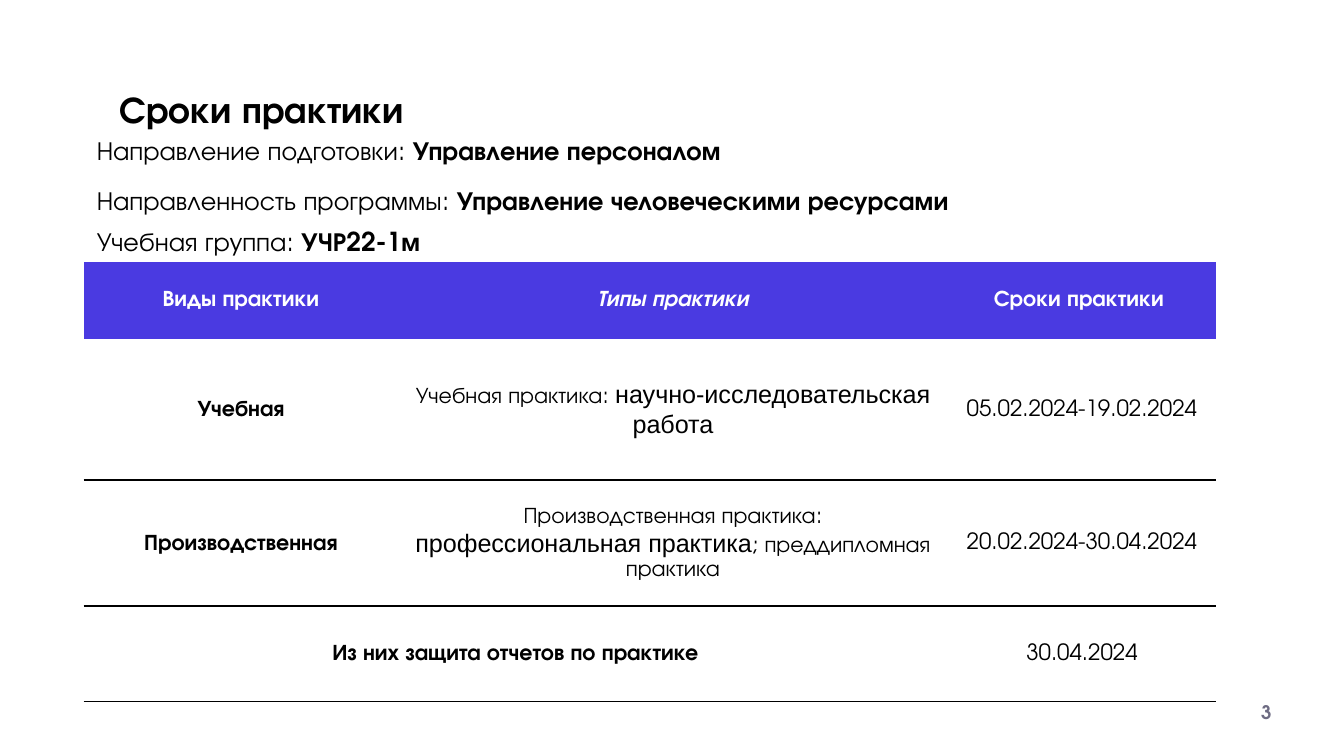
from dataclasses import dataclass

from lxml import etree
from pptx import Presentation
from pptx.dml.color import RGBColor
from pptx.enum.text import MSO_ANCHOR, PP_ALIGN
from pptx.util import Cm, Pt

LEFT, CENTER, RIGHT = PP_ALIGN.LEFT, PP_ALIGN.CENTER, PP_ALIGN.RIGHT
TOP, MIDDLE = MSO_ANCHOR.TOP, MSO_ANCHOR.MIDDLE
PLAIN = "{2D5ABB26-0587-4C30-8999-92F81FD0307C}"
SPACE = "http://schemas.openxmlformats.org/drawingml/2006/main"


@dataclass(frozen=True)
class Theme:
    """Colours, fonts and type sizes of the slide."""
    ink: str = "000000"
    paper: str = "FFFFFF"
    accent: str = "4A3AE1"
    muted: str = "6E6C83"
    font: str = "TeX Gyre Adventor"
    alt: str = "Arial"
    title: float = 20
    body: float = 14
    gap: float = 18
    cell: float = 12
    term: float = 13.5
    page: float = 10


THEME = Theme()


def write(frame, paras, size, color=THEME.ink, align=LEFT, lines=1.0, before=0):
    """Fill a text frame with paragraphs made of (text, format) runs."""
    for i, runs in enumerate(paras):
        para = frame.paragraphs[0] if i == 0 else frame.add_paragraph()
        para.alignment, para.line_spacing = align, lines
        para.space_before = Pt(before)
        for text, look in runs:
            run = para.add_run()
            run.text = text
            font = run.font
            font.name = look.get("font", THEME.font)
            font.size = Pt(look.get("size", size))
            font.bold = look.get("bold", False)
            font.italic = look.get("italic", False)
            font.color.rgb = RGBColor.from_string(color)


def rule(cell, side, width):
    """Draw one border of a table cell."""
    line = etree.Element(f"{{{SPACE}}}ln{side}", w=str(Pt(width)))
    fill = etree.SubElement(line, f"{{{SPACE}}}solidFill")
    etree.SubElement(fill, f"{{{SPACE}}}srgbClr", val=THEME.ink)
    cell._tc.get_or_add_tcPr().insert(0, line)


class Page:
    """A slide and the style its elements share."""

    def __init__(self, slide, theme):
        """Keep the slide and the theme."""
        self.slide, self.theme = slide, theme

    def text(self, box, paras, size, pad=(0.25, 0.13), anchor=TOP, **look):
        """Add a wrapped text box."""
        frame = self.slide.shapes.add_textbox(*map(Cm, box)).text_frame
        frame.word_wrap, frame.vertical_anchor = True, anchor
        frame.margin_left = frame.margin_right = Cm(pad[0])
        frame.margin_top = frame.margin_bottom = Cm(pad[1])
        write(frame, paras, size, **look)

    def table(self, left, top, cols, rows, data):
        """Add the table with a coloured head and ruled rows."""
        table = self.slide.shapes.add_table(
            len(rows), len(cols), Cm(left), Cm(top),
            Cm(sum(cols)), Cm(sum(rows))).table
        table.first_row = table.horz_banding = False
        table._tbl.tblPr.find(f"{{{SPACE}}}tableStyleId").text = PLAIN
        for col, width in zip(table.columns, cols):
            col.width = Cm(width)
        for row, height in zip(table.rows, rows):
            row.height = Cm(height)
        table.cell(3, 0).merge(table.cell(3, 1))
        for r, line in enumerate(data):
            for c, runs in enumerate(line):
                self.cell(table.cell(r, c), r, c, runs, r == len(data) - 1)

    def cell(self, cell, row, col, runs, last):
        """Style and fill one table cell."""
        head = row == 0
        tight = (col == 1 and not head) or (last and col == 2)
        cell.vertical_anchor = MIDDLE
        cell.margin_left = cell.margin_right = Cm(0.19 if tight else 0.25)
        cell.margin_top = cell.margin_bottom = Cm(0 if tight else 0.25)
        if head:
            cell.fill.solid()
            cell.fill.fore_color.rgb = RGBColor.from_string(self.theme.accent)
        else:
            cell.fill.background()
            rule(cell, "B", 0.75 if last else 1)
            if row > 1:
                rule(cell, "T", 1)
        if runs:
            flat = head or (last and col == 0)
            lines = 1.0 if flat else 1.07 if col else 1.14
            color = self.theme.paper if head else self.theme.ink
            write(cell.text_frame, [runs], self.theme.cell, color=color,
                  align=CENTER, lines=lines)


def main():
    """Build and save the slide."""
    deck = Presentation()
    deck.slide_width, deck.slide_height = Cm(25.4), Cm(14.29)
    page = Page(deck.slides.add_slide(deck.slide_layouts[6]), THEME)
    bold, slant = {"bold": True}, {"bold": True, "italic": True}
    term = {"font": THEME.alt, "size": THEME.term}
    gap = (" ", {"size": THEME.gap})
    page.table(1.58, 4.95, (5.95, 10.38, 5.08), (1.45, 2.67, 2.39, 1.8), [
        [[("Виды практики", bold)], [("Типы практики", slant)],
         [("Сроки практики ", bold)]],
        [[("Учебная", bold)],
         [("Учебная практика: ", {}),
          ("научно-исследовательская работа", term)],
         [("05.02.2024-19.02.2024", {})]],
        [[("Производственная", bold)],
         [("Производственная практика: ", {}),
          ("профессиональная практика", term),
          ("; преддипломная практика", {})],
         [("20.02.2024-30.04.2024", {})]],
        [[("Из них защита отчетов по практике", bold)], [],
         [("30.04.2024", {})]],
    ])
    page.text((2.01, 1.17, 21.41, 1.7), [[("Сроки практики", bold)]],
              THEME.title, pad=(0.25, 0.25), lines=1.25)
    page.text((1.58, 2.08, 21.41, 2.84), [
        [("Направление подготовки: ", {}), ("Управление персоналом", bold), gap],
        [("Направленность программы: ", {}),
         ("Управление человеческими ресурсами", bold), gap],
        [("Учебная группа: ", {}), ("УЧР22-1м", bold)],
    ], THEME.body, lines=1.25)
    page.text((13.97, 13.06, 10.31, 0.84), [[("3", bold)]], THEME.page,
              anchor=MIDDLE, color=THEME.muted, align=RIGHT, lines=0.9,
              before=7.5)
    deck.save("out.pptx")


if __name__ == "__main__":
    main()
